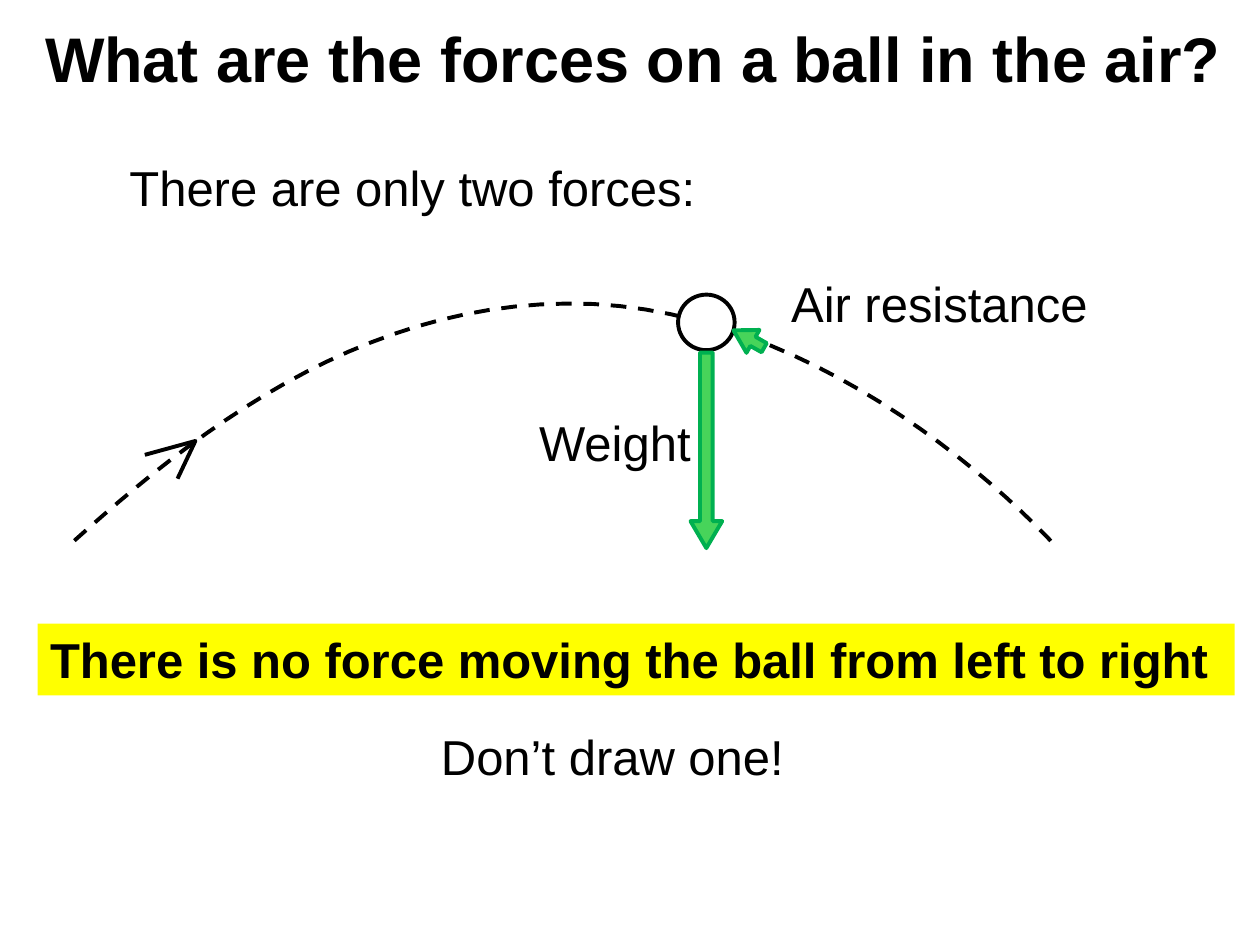
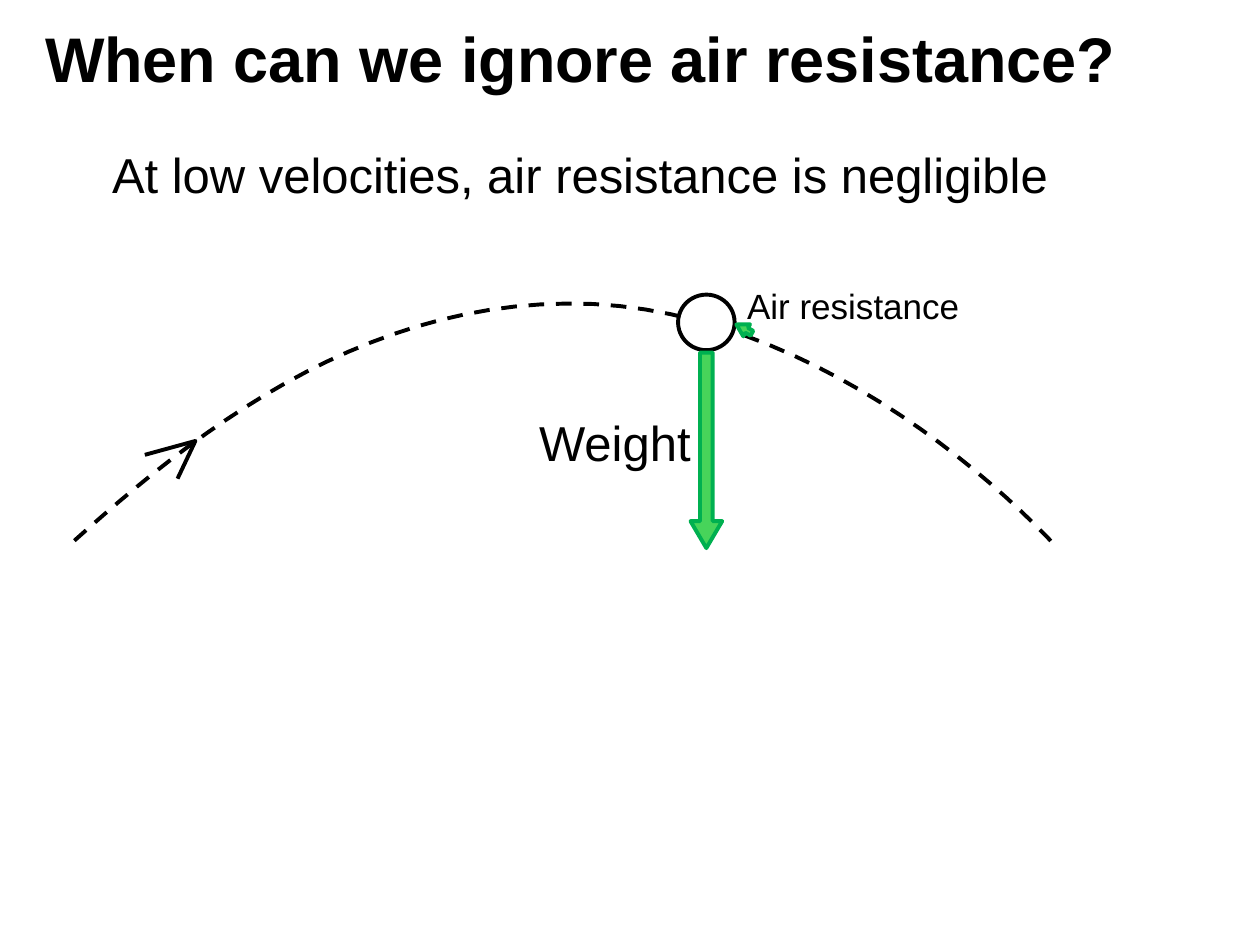
from pptx import Presentation
from pptx.dml.color import RGBColor
from pptx.enum.dml import MSO_LINE
from pptx.enum.shapes import MSO_SHAPE
from pptx.enum.text import MSO_ANCHOR, MSO_AUTO_SIZE
from pptx.util import Cm, Pt

OVAL, DOWN = MSO_SHAPE.OVAL, MSO_SHAPE.DOWN_ARROW
DASH = MSO_LINE.DASH
MIDDLE = MSO_ANCHOR.MIDDLE
FIT = MSO_AUTO_SIZE.SHAPE_TO_FIT_TEXT

FONT = "Arial"
BLACK, WHITE, YELLOW = "000000", "FFFFFF", "FFFF00"
GREEN, EDGE = "47D45A", "00B050"

# All lengths are in centimetres; boxes are left, top, width, height.
TITLE = (0.66, 0.43, 24.23, 1.65)
BALL = (13.67, 5.94, 1.14, 1.12)
WEIGHT = (13.92, 7.11, 0.64, 3.94)
TILT = 119.5
START = (1.5, 10.9)
CURVES = [  # two controls and an end for each part of the flight
    [(3.84, 8.81), (7.14, 6.15), (11.43, 6.12)],
    [(15.7, 6.07), (19.56, 9.14), (21.34, 11.07)],
]
CHEVRON = [(2.92, 9.17), (3.94, 8.89), (3.58, 9.65)]
STEPS = 24

SLIDES = [
    {
        "title": "What are the forces on a ball in the air?",
        "drag": (14.83, 6.48, 0.53, 0.71),
        "texts": [
            ("Air resistance", (15.7, 5.38, 6.55, 1.45), {}),
            ("There are only two forces:", (2.36, 3.05, 12.07, 1.45), {}),
            ("There is no force moving the ball from left to right",
             (0.76, 12.57, 24.13, 1.45), {"bold": True, "fill": YELLOW}),
            ("Don’t draw one!", (8.64, 14.53, 14.96, 1.45), {}),
        ],
    },
    {
        "title": "When can we ignore air resistance?",
        "drag": (14.86, 6.45, 0.28, 0.36),
        "texts": [
            ("Air resistance", (14.81, 5.61, 4.83, 1.12), {"size": 20}),
            ("At low velocities, air resistance is negligible",
             (2.01, 2.79, 19.61, 1.45), {}),
        ],
    },
]
WEIGHT_TEXT = ("Weight", (10.62, 8.2, 3.61, 1.45))


def paint(part, color):
    part.solid()
    part.fore_color.rgb = RGBColor.from_string(color)


def outline(shape, color):
    shape.shadow.inherit = False
    paint(shape.line.fill, color)
    shape.line.width = Pt(2.25)


def add_text(slide, text, box, size=28, bold=False, fill=None,
             after=12, spacing=None, anchor=None):
    shape = slide.shapes.add_textbox(*map(Cm, box))
    if fill:
        paint(shape.fill, fill)
    frame = shape.text_frame
    frame.word_wrap = False
    frame.auto_size = FIT
    if anchor is not None:
        frame.vertical_anchor = anchor
    para = frame.paragraphs[0]
    para.space_after = Pt(after)
    para.line_spacing = spacing
    run = para.add_run()
    run.text = text
    run.font.name, run.font.size, run.font.bold = FONT, Pt(size), bold
    paint(run.font.fill, BLACK)


def add_solid(slide, kind, box, fill, line):
    shape = slide.shapes.add_shape(kind, *map(Cm, box))
    paint(shape.fill, fill)
    outline(shape, line)
    return shape


def add_arrow(slide, box, angle=0):
    arrow = add_solid(slide, DOWN, box, GREEN, EDGE)
    arrow.adjustments[0] = 0.4
    arrow.adjustments[1] = 0.85
    arrow.rotation = angle


def add_path(slide, points):
    """Draw an open, unfilled line through the points."""
    first, *rest = [(Cm(x), Cm(y)) for x, y in points]
    pen = slide.shapes.build_freeform(*first)
    pen.add_line_segments(rest, close=False)
    shape = pen.convert_to_shape()
    shape.fill.background()
    outline(shape, BLACK)
    return shape


def flight():
    """Sample the cubic curves of the ball's flight."""
    points = [START]
    for curve in CURVES:
        knots = [points[-1], *curve]
        for step in range(1, STEPS + 1):
            t = step / STEPS
            u = 1 - t
            parts = (u ** 3, 3 * u * u * t, 3 * u * t * t, t ** 3)
            points.append(tuple(sum(p * knot[axis] for p, knot in zip(parts, knots))
                                for axis in (0, 1)))
    return points


def add_scene(slide, drag):
    add_path(slide, flight()).line.dash_style = DASH
    add_solid(slide, OVAL, BALL, WHITE, BLACK)
    add_arrow(slide, WEIGHT)
    add_arrow(slide, drag, TILT)
    add_path(slide, CHEVRON)
    add_text(slide, *WEIGHT_TEXT)


def main():
    deck = Presentation()
    deck.slide_width, deck.slide_height = Cm(25.4), Cm(19.05)
    blank = deck.slide_layouts[6]
    for data in SLIDES:
        slide = deck.slides.add_slide(blank)
        add_text(slide, data["title"], TITLE, size=36, bold=True,
                 after=0, spacing=0.9, anchor=MIDDLE)
        add_scene(slide, data["drag"])
        for text, box, style in data["texts"]:
            add_text(slide, text, box, **style)
    deck.save("out.pptx")


if __name__ == "__main__":
    main()
